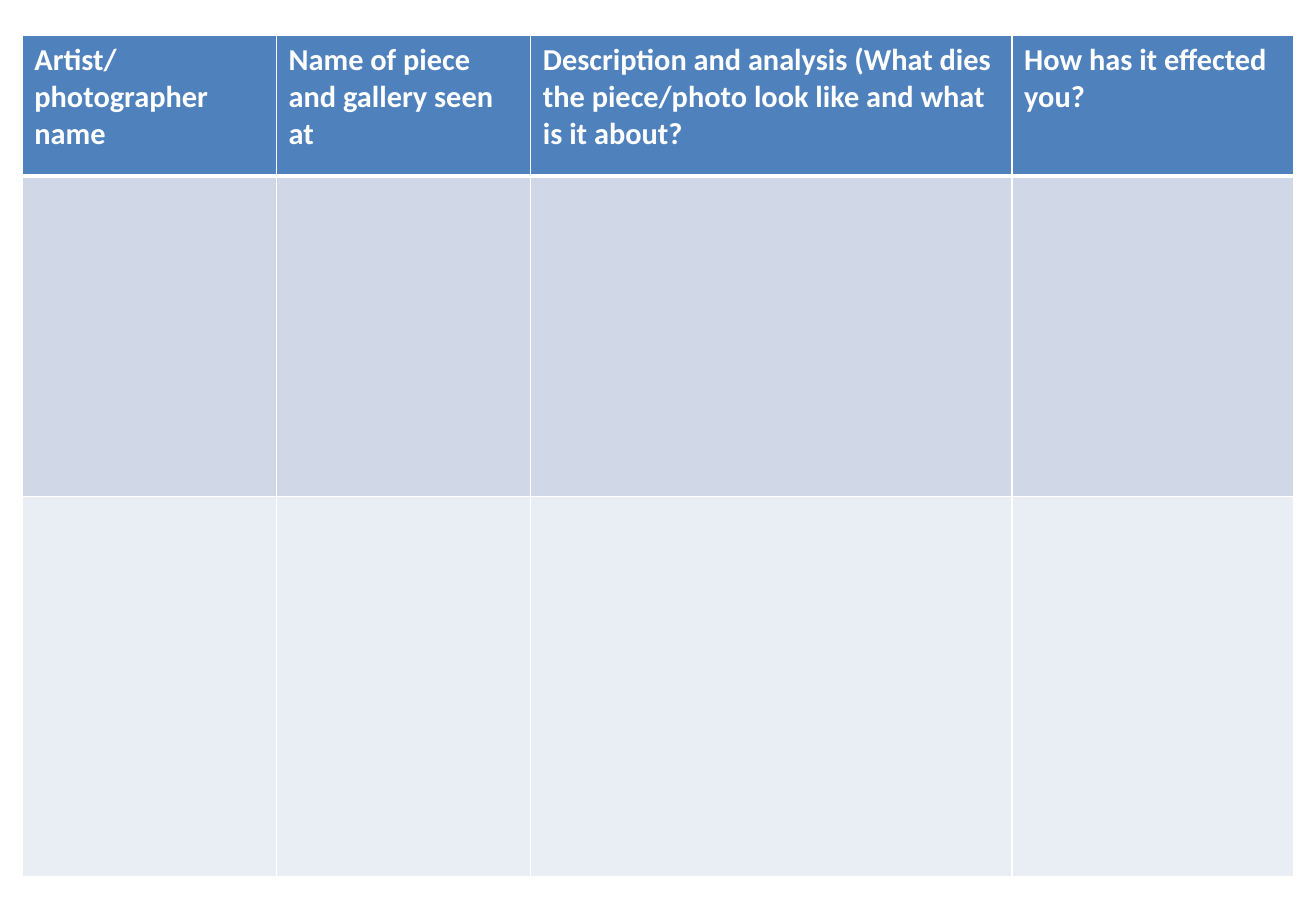
from lxml.etree import SubElement
from pptx import Presentation
from pptx.dml.color import RGBColor
from pptx.oxml.ns import qn
from pptx.util import Pt


def color(hex_value):
    return RGBColor.from_string(hex_value)


def add_border(cell, side, width, hex_value):
    line = SubElement(cell._tc.get_or_add_tcPr(), qn(f"a:ln{side}"), w=str(Pt(width)))
    fill = SubElement(line, qn("a:solidFill"))
    SubElement(fill, qn("a:srgbClr"), val=hex_value)


WHITE = "FFFFFF"
headings = [
    "Artist/photographer name",
    "Name of piece and gallery seen at",
    "Description and analysis (What dies the piece/photo look like and what is it about?",
    "How has it effected you?",
]
column_widths = [150.7, 150.7, 285.3, 167]
row_heights = [83.5, 190, 225.5]
row_fills = ["4F81BD", "D0D8E8", "E9EDF4"]

# Slide
deck = Presentation()
deck.slide_width, deck.slide_height = Pt(780), Pt(540)
slide = deck.slides.add_slide(deck.slide_layouts[6])

# Gallery visit table
visit_log = slide.shapes.add_table(
    len(row_heights), len(headings), Pt(13.2), Pt(20.9),
    Pt(sum(column_widths)), Pt(sum(row_heights))).table
for column, width in zip(visit_log.columns, column_widths):
    column.width = Pt(width)

# Row heights, borders and fills
for row_index, (row, height) in enumerate(zip(visit_log.rows, row_heights)):
    row.height = Pt(height)
    for cell in row.cells:
        top = 3 if row_index == 1 else 1
        bottom = 3 if row_index == 0 else 1
        for side, width in (("L", 1), ("R", 1), ("T", top), ("B", bottom)):
            add_border(cell, side, width, WHITE)
        cell.fill.solid()
        cell.fill.fore_color.rgb = color(row_fills[row_index])

# Headings
for cell, heading in zip(visit_log.rows[0].cells, headings):
    run = cell.text_frame.paragraphs[0].add_run()
    run.text = heading
    run.font.name = "Calibri"
    run.font.size = Pt(18)
    run.font.bold = True
    run.font.color.rgb = color(WHITE)

deck.save("out.pptx")
